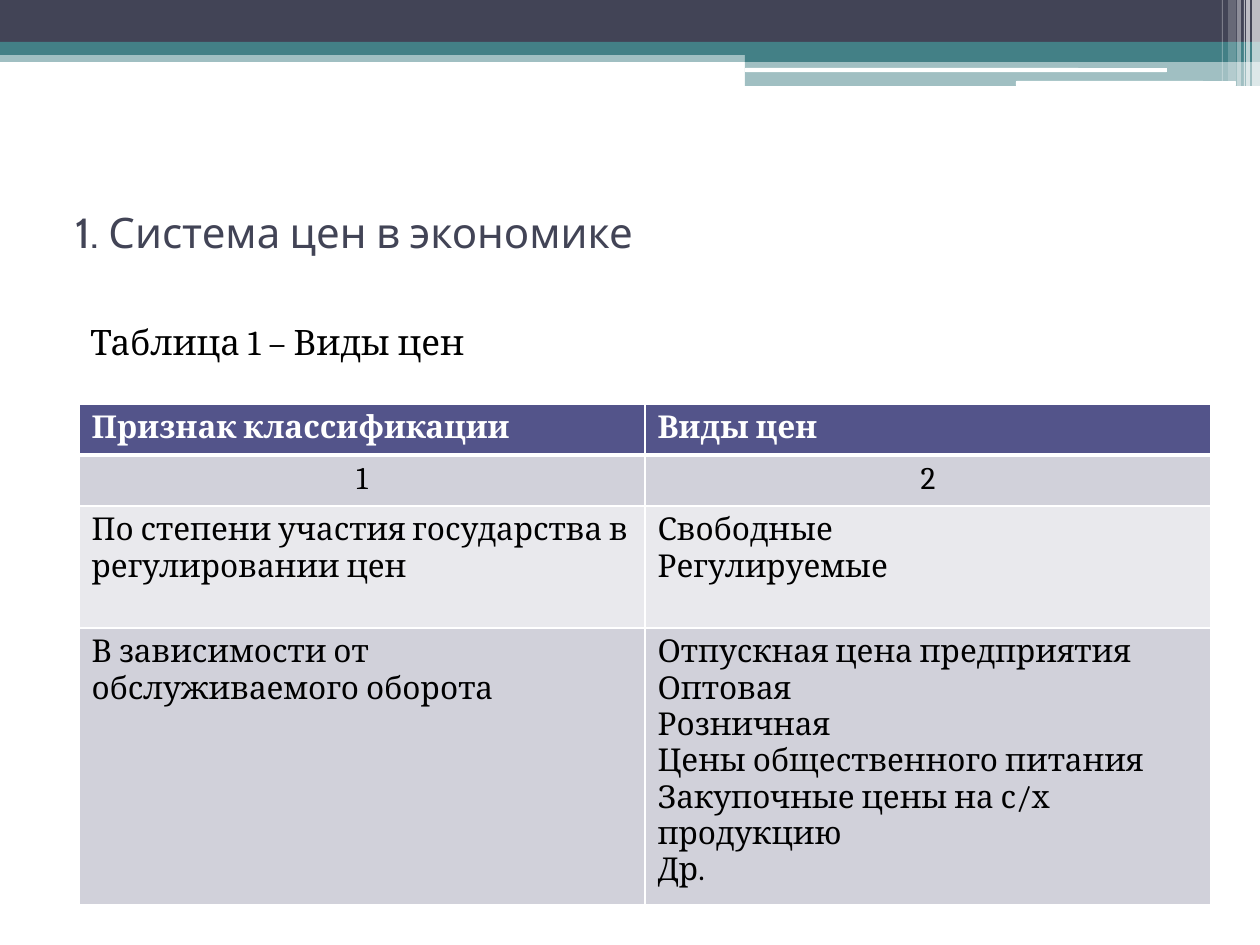
from pptx import Presentation
from pptx.dml.color import RGBColor
from pptx.enum.shapes import MSO_SHAPE
from pptx.enum.text import MSO_ANCHOR, PP_ALIGN
from pptx.oxml import parse_xml
from pptx.oxml.ns import nsdecls
from pptx.util import Pt
from lxml.etree import SubElement

PX = 914400 / 126
HUES = {"navy": "424456", "teal": "438086", "white": "FFFFFF", "black": "000000",
        "head": "53548A", "dark": "D1D1DA", "pale": "E9E9ED"}


def scale(*sizes):
    return [round(size * PX) for size in sizes]


def write(para, text, size, face, hue, bold=False):
    run = para.add_run()
    run.text = text
    run.font.size = Pt(size)
    run.font.name = face
    run.font.bold = bold
    run.font.color.rgb = RGBColor.from_string(HUES[hue])


deck = Presentation()
deck.slide_width, deck.slide_height = scale(1260, 945)
slide = deck.slides.add_slide(deck.slide_layouts[5])

# Header bands and stripes: left, top, width, height, colour, opacity
bands = [
    (0, 50, 1260, 12, "teal", 50),
    (0, 0, 1260, 42, "navy", 100),
    (0, 42, 1260, 13, "teal", 100),
    (745, 49, 515, 13, "teal", 100),
    (745, 61, 515, 25, "teal", 50),
    (745, 68, 422, 4, "white", 100),
    (1016, 81, 220, 5, "white", 100),
    (1252, 0, 8, 86, "white", 65),
    (1246, 0, 4, 86, "white", 65),
    (1244, 0, 1, 86, "white", 60),
    (1237, 0, 4, 86, "white", 40),
    (1228, 0, 8, 81, "white", 20),
    (1222, 0, 1, 81, "white", 30),
]
for *place, hue, alpha in bands:
    round_end = hue == "white" and alpha == 100
    kind = MSO_SHAPE.ROUNDED_RECTANGLE if round_end else MSO_SHAPE.RECTANGLE
    band = slide.shapes.add_shape(kind, *scale(*place))
    band.shadow.inherit = False
    band.line.fill.background()
    band.fill.solid()
    band.fill.fore_color.rgb = RGBColor.from_string(HUES[hue])
    if alpha < 100:
        color = band.fill._xPr.solidFill[0]
        SubElement(color, color.tag.replace("srgbClr", "alpha"), val=str(alpha * 1000))

# Title
title = slide.shapes.title
title.left, title.top, title.width, title.height = scale(63, 158, 1134, 147)
title.text_frame.vertical_anchor = MSO_ANCHOR.MIDDLE
para = title.text_frame.paragraphs[0]
para.alignment = PP_ALIGN.LEFT
write(para, "1. Система цен в экономике", 24, "Cabin", "navy")

# Table caption
note = slide.shapes.add_textbox(*scale(78, 314, 1119, 50)).text_frame
note.word_wrap = True
write(note.paragraphs[0], "Таблица 1 – Виды цен", 20, "Cambria", "black")

# Table of price kinds
rows = [
    (51, "head", ["Признак классификации"], ["Виды цен"]),
    (51, "dark", ["1"], ["2"]),
    (122, "pale", ["По степени участия государства в регулировании цен"],
     ["Свободные", "Регулируемые"]),
    (267, "dark", ["В зависимости от обслуживаемого оборота"],
     ["Отпускная цена предприятия", "Оптовая", "Розничная",
      "Цены общественного питания", "Закупочные цены на с/х продукцию", "Др."]),
]
table = slide.shapes.add_table(len(rows), 2, *scale(79, 404, 1132, 491)).table
table.first_row = table.horz_banding = False
for r, (height, hue, *texts) in enumerate(rows):
    table.rows[r].height = scale(height)[0]
    for c, lines in enumerate(texts):
        cell = table.cell(r, c)
        props = cell._tc.get_or_add_tcPr()
        for side in "LRTB":
            thick = (r, side) in [(0, "B"), (1, "T")]
            props.append(parse_xml(
                f'<a:ln{side} {nsdecls("a")} w="{Pt(3 if thick else 1)}"><a:solidFill>'
                f'<a:srgbClr val="{HUES["white"]}"/></a:solidFill></a:ln{side}>'))
        cell.fill.solid()
        cell.fill.fore_color.rgb = RGBColor.from_string(HUES[hue])
        for i, line in enumerate(lines):
            frame = cell.text_frame
            para = frame.add_paragraph() if i else frame.paragraphs[0]
            para.alignment = PP_ALIGN.CENTER if r == 1 else PP_ALIGN.LEFT
            write(para, line, 18, "Cambria", "black" if r else "white", bold=r == 0)

deck.save("out.pptx")
